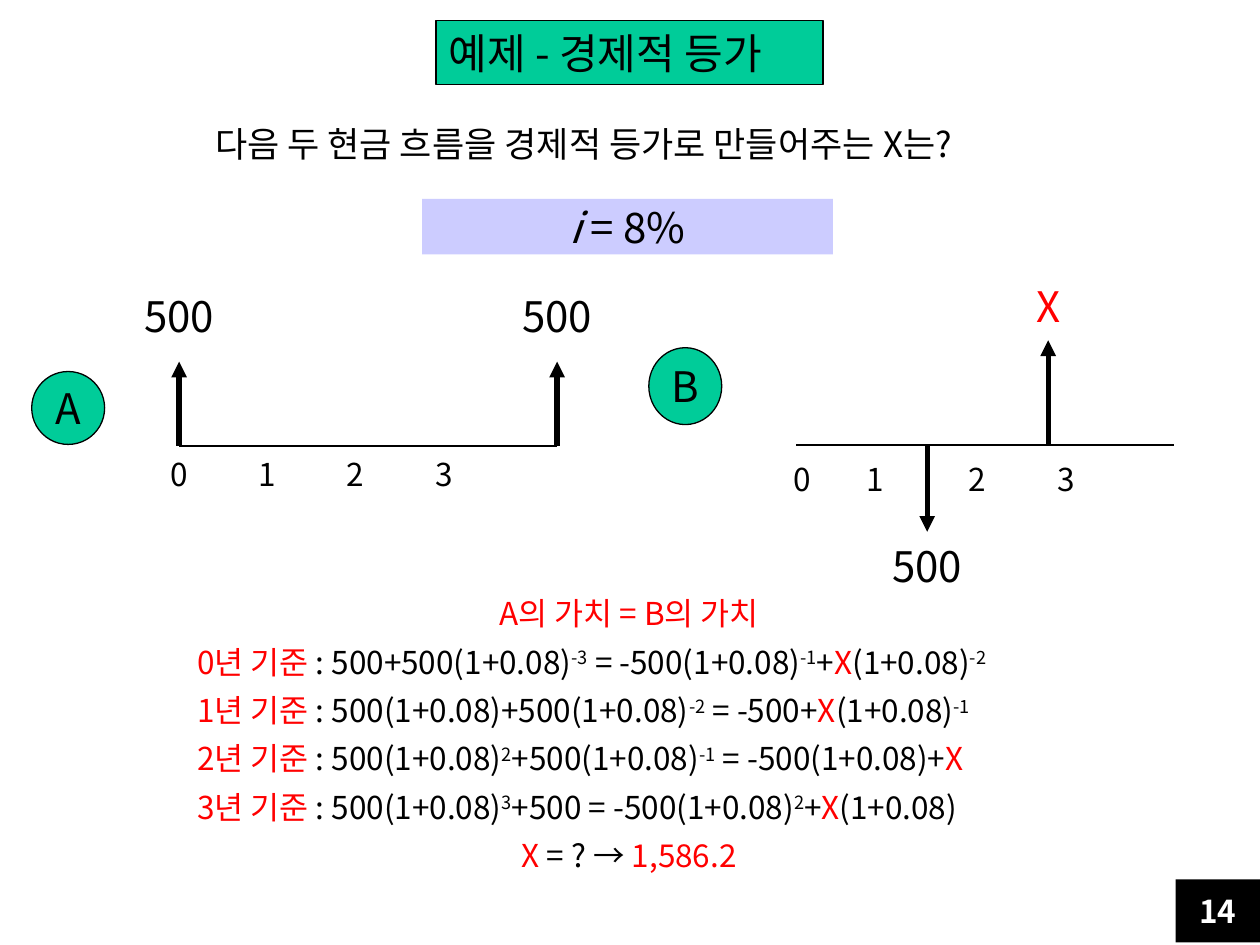
from dataclasses import dataclass

from lxml import etree
from pptx import Presentation
from pptx import util as u
from pptx.dml.color import RGBColor
from pptx.enum import shapes, text
from pptx.oxml.ns import qn

Cm = u.Cm
LEFT, CENTER = text.PP_ALIGN.LEFT, text.PP_ALIGN.CENTER


@dataclass(frozen=True)
class Theme:
    font: str = "Noto Sans CJK KR"
    ink: str = "000000"
    accent: str = "FF0000"
    paper: str = "FFFFFF"
    green: str = "00CC99"
    lilac: str = "CCCCFF"
    large: int = 24
    medium: int = 20
    small: int = 18
    thin: float = 0.75
    thick: float = 3


@dataclass(frozen=True)
class Run:
    words: str
    color: str = Theme.ink
    bold: bool = False
    italic: bool = False
    raised: bool = False


def red(words):
    return Run(words, Theme.accent)


def power(words):
    return Run(words, raised=True)


class SlideBuilder:
    def __init__(self, slide, theme):
        self.slide, self.theme = slide, theme

    def add_runs(self, paragraph, runs, size, align=LEFT):
        paragraph.alignment = align
        for item in runs:
            run = paragraph.add_run()
            run.text = item.words
            font = run.font
            font.name, font.size = self.theme.font, u.Pt(size)
            font.bold, font.italic = item.bold, item.italic
            font.color.rgb = RGBColor.from_string(item.color)
            props = run._r.get_or_add_rPr()
            east_asian = etree.SubElement(props, qn("a:ea"))
            east_asian.set("typeface", self.theme.font)
            if item.raised:
                props.set("baseline", "30000")

    def text_box(self, left, top, width, height, lines, size, gap=0):
        """Each line is a pair of alignment and runs."""
        box = self.slide.shapes.add_textbox(Cm(left), Cm(top), Cm(width), Cm(height))
        frame = box.text_frame
        frame.word_wrap = False
        frame.auto_size = text.MSO_AUTO_SIZE.SHAPE_TO_FIT_TEXT
        for i, (align, runs) in enumerate(lines):
            paragraph = frame.add_paragraph() if i else frame.paragraphs[0]
            paragraph.space_after = u.Pt(gap)
            self.add_runs(paragraph, runs, size, align)

    def caption(self, center, top, run, size, width=2):
        self.text_box(center - width / 2, top, width, size * 0.05,
                      [(CENTER, [run])], size)

    def panel(self, kind, left, top, width, height, fill, runs, size,
              outlined=False, align=CENTER):
        panel = self.slide.shapes.add_shape(kind, Cm(left), Cm(top), Cm(width), Cm(height))
        panel.shadow.inherit = False
        panel.fill.solid()
        panel.fill.fore_color.rgb = RGBColor.from_string(fill)
        if outlined:
            panel.line.color.rgb = RGBColor.from_string(self.theme.ink)
            panel.line.width = u.Pt(self.theme.thin)
        else:
            panel.line.fill.background()
        frame = panel.text_frame
        frame.word_wrap = False
        frame.vertical_anchor = text.MSO_ANCHOR.MIDDLE
        self.add_runs(frame.paragraphs[0], runs, size, align)

    def line(self, x1, y1, x2, y2, arrow=False):
        line = self.slide.shapes.add_connector(
            shapes.MSO_CONNECTOR.STRAIGHT, Cm(x1), Cm(y1), Cm(x2), Cm(y2))
        line.line.color.rgb = RGBColor.from_string(self.theme.ink)
        line.line.width = u.Pt(self.theme.thick if arrow else self.theme.thin)
        if arrow:
            etree.SubElement(line.line._get_or_add_ln(), qn("a:tailEnd")).set("type", "triangle")
        etree.SubElement(line._element.spPr, qn("a:effectLst"))

    def cash_flow(self, start, base, length, tick_top, ticks, flows):
        """Flows hold x, arrow tip, caption top and amount."""
        self.line(start, base, start + length, base)
        for year, x in enumerate(ticks):
            self.caption(x, tick_top, Run(str(year)), self.theme.small, 1)
        for x, tip, top, amount in flows:
            self.line(x, base, x, tip, arrow=True)
            self.caption(x, top, amount, self.theme.large)


def main():
    theme = Theme()
    deck = Presentation()
    deck.slide_width, deck.slide_height = Cm(25.4), Cm(19.05)
    build = SlideBuilder(deck.slides.add_slide(deck.slide_layouts[6]), theme)
    rect, oval = shapes.MSO_SHAPE.RECTANGLE, shapes.MSO_SHAPE.OVAL

    # Heading, question and interest rate
    build.panel(rect, 8.79, 0.41, 7.8, 1.3, theme.green,
                [Run("예제 - 경제적 등가")], theme.large, outlined=True, align=LEFT)
    question = [Run("다음 두 현금 흐름을 경제적 등가로 만들어주는 X는?")]
    build.text_box(4.09, 2.34, 17.25, 1.12, [(LEFT, question)], theme.medium)
    build.panel(rect, 8.51, 4.01, 8.28, 1.12, theme.lilac,
                [Run("i", italic=True), Run(" = 8%")], theme.large)

    # Cash flows A and B
    amount = Run("500")
    build.panel(oval, 0.64, 7.49, 1.47, 1.47, theme.green, [Run("A")],
                theme.large, outlined=True)
    build.cash_flow(3.61, 8.99, 7.62, 9.04, [3.61 + 1.78 * year for year in range(4)],
                    [(3.61, 7.29, 5.74, amount), (11.23, 7.29, 5.74, amount)])
    build.panel(oval, 13.08, 7.01, 1.47, 1.55, theme.green, [Run("B")],
                theme.large, outlined=True)
    build.cash_flow(16.05, 8.97, 7.62, 9.14, [16.17, 17.65, 19.71, 21.49],
                    [(18.69, 10.72, 10.77, amount), (21.13, 6.86, 5.54, red("X"))])

    # Equal values at each base year
    equations = [
        [Run(": 500+500(1+0.08)"), power("-3"), Run(" = -500(1+0.08)"), power("-1"),
         Run("+"), red("X"), Run("(1+0.08)"), power("-2")],
        [Run(": 500(1+0.08)+500(1+0.08)"), power("-2"), Run(" = -500+"), red("X"),
         Run("(1+0.08)"), power("-1")],
        [Run(": 500(1+0.08)"), power("2"), Run("+500(1+0.08)"), power("-1"),
         Run(" = -500(1+0.08)+"), red("X")],
        [Run(": 500(1+0.08)"), power("3"), Run("+500 = -500(1+0.08)"), power("2"),
         Run("+"), red("X"), Run("(1+0.08)")],
    ]
    solution = [(CENTER, [red("A의 가치 = B의 가치")])]
    solution += [(LEFT, [red(f"{year}년 기준 "), *equation])
                 for year, equation in enumerate(equations)]
    solution.append((CENTER, [red("X"), Run(" = ? → "), red("1,586.2")]))
    build.text_box(3.73, 11.86, 17.91, 5.94, solution, theme.small, gap=6)

    # Page number
    build.panel(rect, 23.7, 17.73, 1.7, 1.27, theme.ink,
                [Run("14", theme.paper, bold=True)], theme.small)

    deck.save("out.pptx")


if __name__ == "__main__":
    main()
